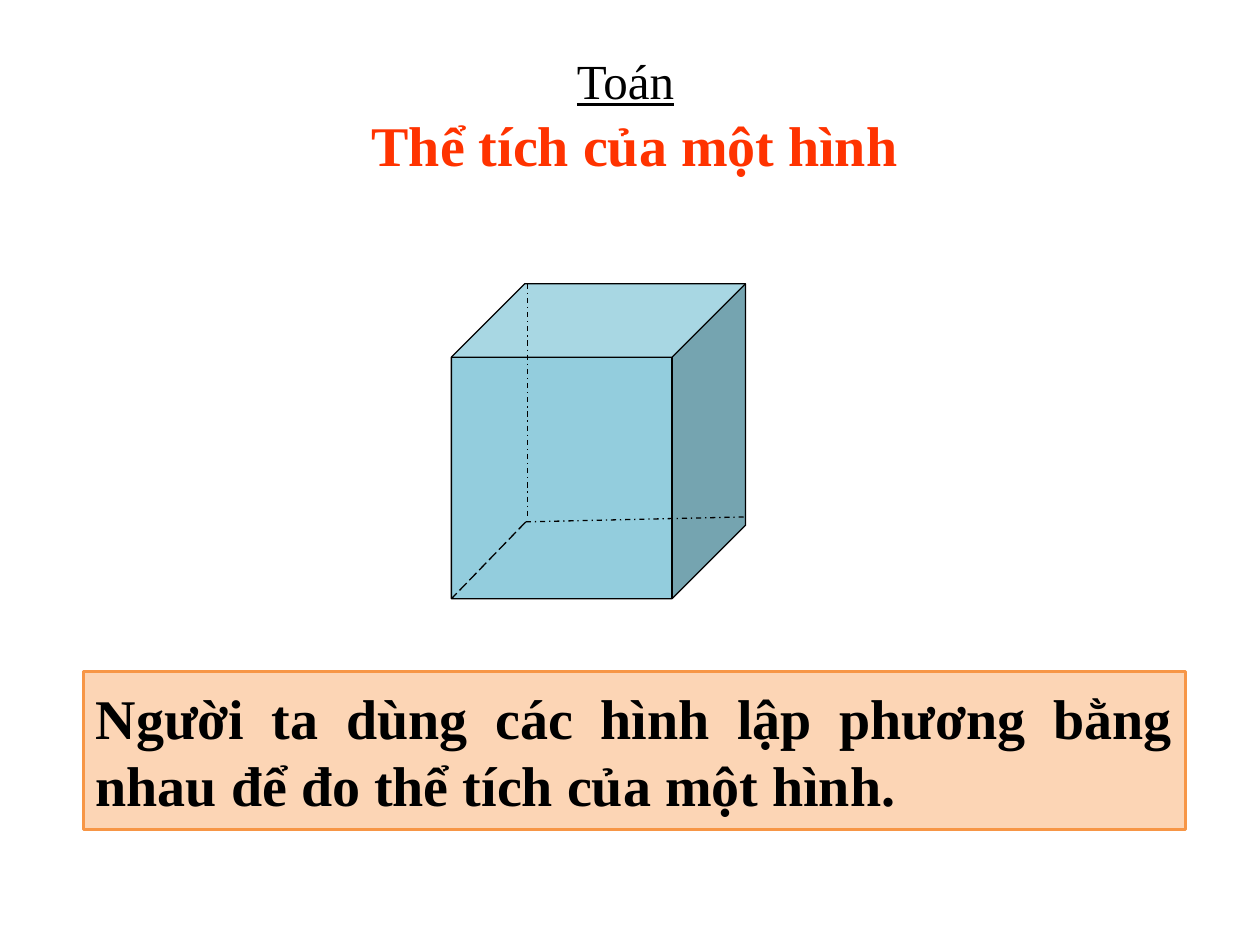
from lxml.etree import SubElement
from pptx import Presentation
from pptx.dml.color import RGBColor
from pptx.enum.dml import MSO_LINE_DASH_STYLE as Dash
from pptx.enum.shapes import MSO_CONNECTOR, MSO_SHAPE
from pptx.enum.text import MSO_ANCHOR, PP_ALIGN
from pptx.oxml.ns import qn
from pptx.util import Cm, Pt

BLACK = RGBColor(0x00, 0x00, 0x00)
RED = RGBColor(0xFF, 0x33, 0x00)
BLUE = RGBColor(0x93, 0xCD, 0xDD)
PEACH = RGBColor(0xFC, 0xD5, 0xB5)
ORANGE = RGBColor(0xF7, 0x96, 0x46)


def write(frame, text, size=32, color=BLACK, bold=False, underline=False,
          align=PP_ALIGN.LEFT, anchor=MSO_ANCHOR.TOP):
    frame.word_wrap = True
    frame.vertical_anchor = anchor
    paragraph = frame.paragraphs[0]
    paragraph.alignment = align
    run = paragraph.add_run()
    run.text = text
    font = run.font
    font.name = "Times New Roman"
    font.size = Pt(size)
    font.bold = bold
    font.underline = underline
    font.color.rgb = color


def add_solid(kind, left, top, width, height, fill, line, weight):
    """Add a filled, outlined shape without shadow; lengths in cm."""
    solid = slide.shapes.add_shape(kind, Cm(left), Cm(top), Cm(width), Cm(height))
    solid.shadow.inherit = False
    solid.fill.solid()
    solid.fill.fore_color.rgb = fill
    solid.line.color.rgb = line
    solid.line.width = Pt(weight)
    return solid


prs = Presentation()
prs.slide_width, prs.slide_height = Cm(25.4), Cm(19.05)
slide = prs.slides.add_slide(prs.slide_layouts[6])

# Headings
lesson = slide.shapes.add_textbox(Cm(6.55), Cm(2.11), Cm(12.5), Cm(1.63))
write(lesson.text_frame, "Thể tích của một hình", color=RED, bold=True,
      align=PP_ALIGN.CENTER)
subject = slide.shapes.add_textbox(Cm(11.13), Cm(0.89), Cm(3.38), Cm(1.45))
subject.text_frame.margin_left = Cm(0.5)
write(subject.text_frame, "Toán", size=28, underline=True)

# Cube with its hidden edges
left, top, width, height = 9.1, 5.72, 5.93, 6.35
cube = add_solid(MSO_SHAPE.CUBE, left, top, width, height, BLUE, BLACK, 0.75)
cube.adjustments[0] = 0.25

back_corner = (10.6, 10.52)
hidden_edges = [
    ((10.63, top), (10.63, 10.46), Dash.DASH_DOT),
    (back_corner, (left, top + height), Dash.LONG_DASH),
    (back_corner, (left + width, 10.42), Dash.DASH_DOT),
]
for start, end, dash in hidden_edges:
    edge = slide.shapes.add_connector(
        MSO_CONNECTOR.STRAIGHT, *(Cm(value) for value in start + end))
    edge.line.color.rgb = BLACK
    edge.line.width = Pt(0.75)
    edge.line.dash_style = dash
    SubElement(edge._element.spPr, qn("a:effectLst"))

# Conclusion
conclusion = add_solid(MSO_SHAPE.RECTANGLE, 1.68, 13.54, 22.22, 3.18,
                       PEACH, ORANGE, 2)
write(conclusion.text_frame,
      "Người ta dùng các hình lập phương bằng nhau để đo thể tích của một hình.",
      bold=True, align=PP_ALIGN.JUSTIFY, anchor=MSO_ANCHOR.MIDDLE)

prs.save("out.pptx")
